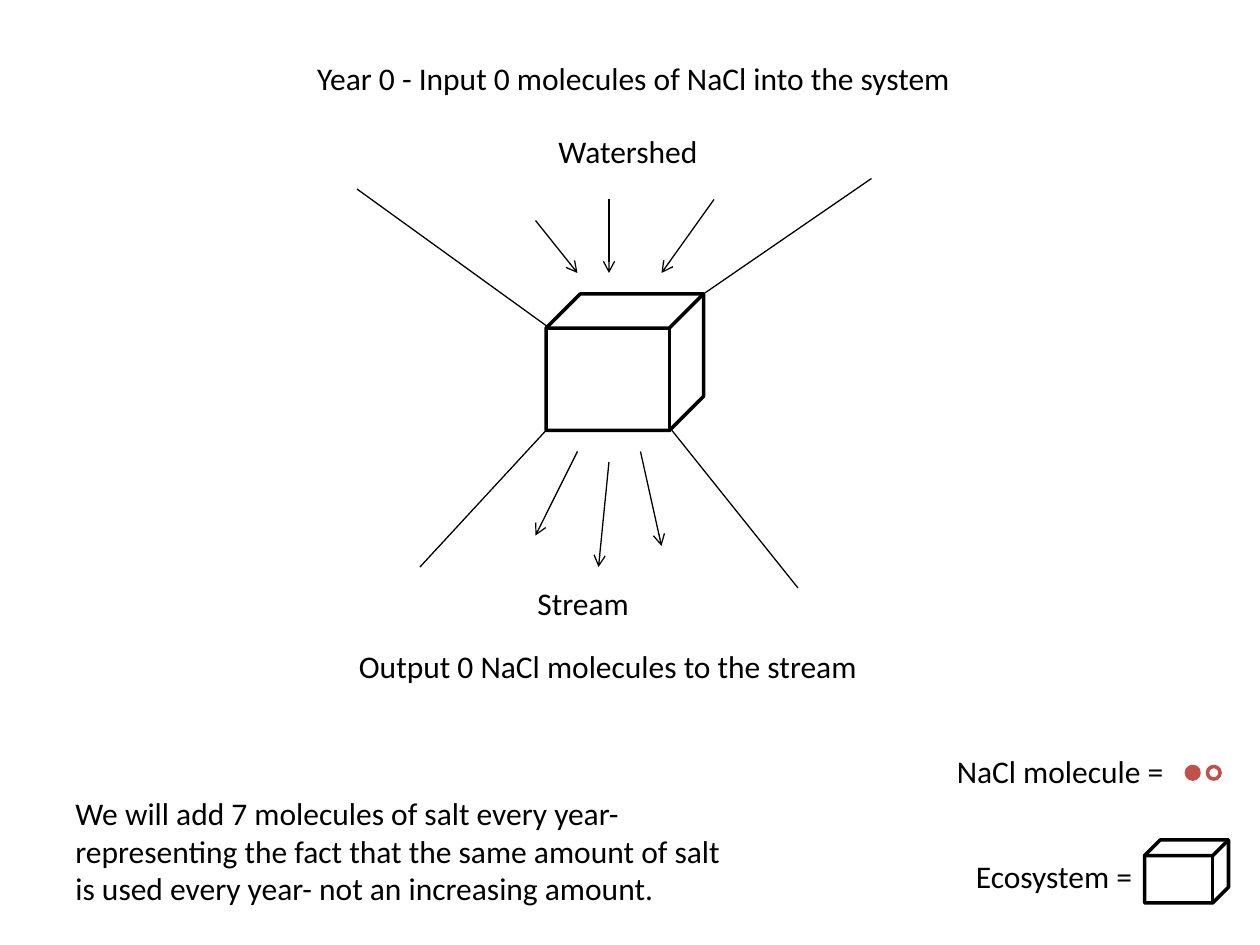
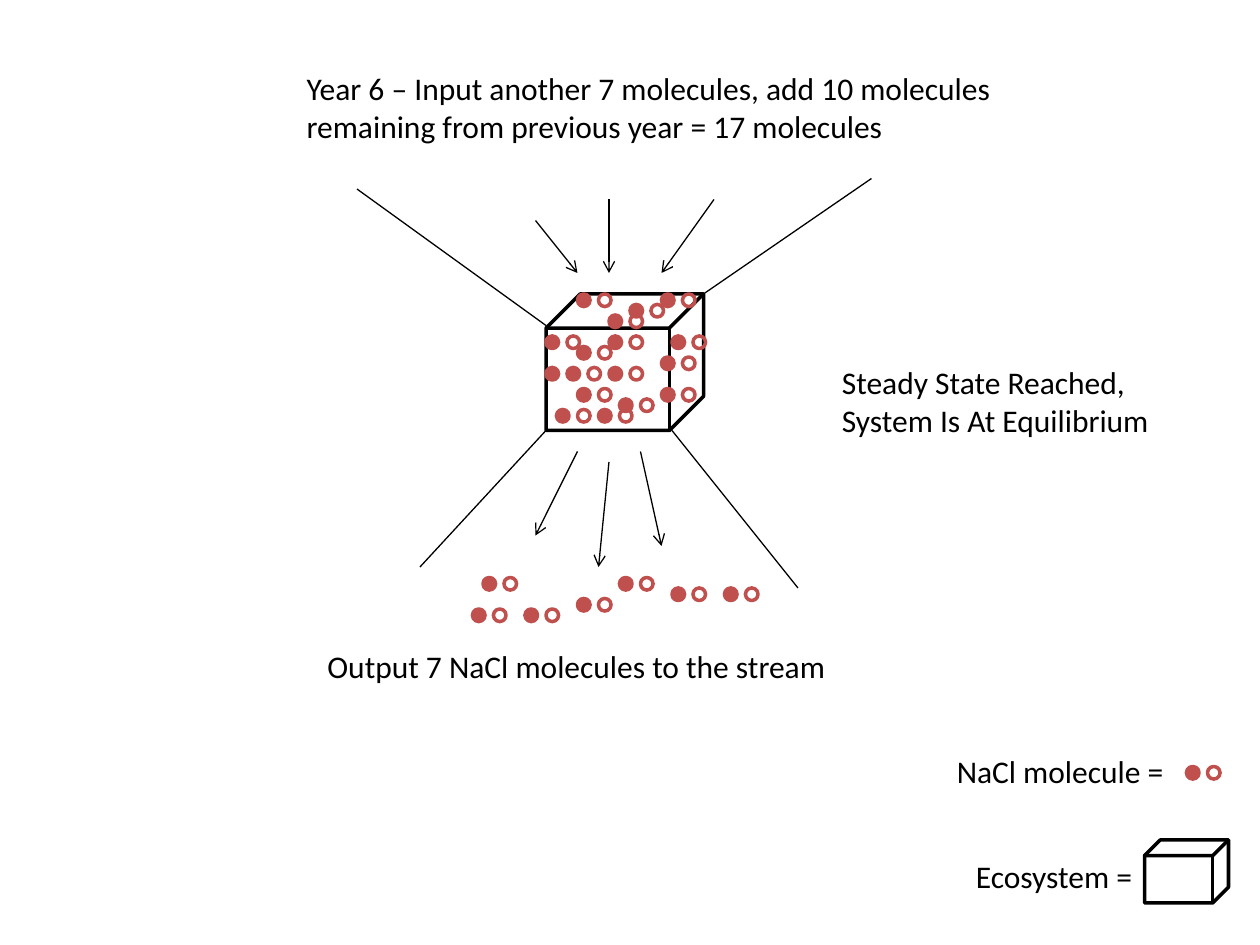
from lxml import etree
from pptx import Presentation
from pptx import util as u
from pptx.dml.color import RGBColor
from pptx.enum import shapes, text
from pptx.oxml.ns import qn

Pt = u.Pt
COLORS = {"ink": "000000", "salt": "C0504D"}
FONT = "Calibri"
ION_SIZE, ION_STEP = 7.2, 12

# Boundary lines of the watershed and the flow arrows: x1, y1, x2, y2
BOUNDARIES = [(312, 246, 240, 324), (384, 246, 456, 336),
              (312, 186, 204, 108), (402, 168, 498, 102)]
FLOWS = [(306, 126, 330, 156), (348, 114, 348, 156), (408, 114, 378, 156),
         (330, 258, 306, 306), (366, 258, 378, 312), (348, 264, 342, 324)]

# Top left corners of the molecules in year 6
STORED = [(312, 192), (348, 192), (354, 228), (330, 168), (384, 192), (378, 168),
          (330, 222), (318, 234), (378, 222), (378, 204), (348, 180), (348, 210),
          (360, 174), (324, 210), (330, 198), (342, 234)]
LONE_ION = (312, 210)
RELEASED = [(276, 330), (330, 342), (384, 336), (354, 330), (300, 348),
            (414, 336), (270, 348)]


def rgb(name):
    return RGBColor.from_string(COLORS[name])


def write(sp, box, words, align=text.PP_ALIGN.LEFT):
    sp.left, sp.top, sp.width, sp.height = map(Pt, box)
    tf = sp.text_frame
    tf.word_wrap = True
    tf.auto_size = text.MSO_AUTO_SIZE.NONE
    tf.vertical_anchor = text.MSO_ANCHOR.TOP
    p = tf.paragraphs[0]
    p.alignment = align
    r = p.add_run()
    r.text = words
    r.font.name, r.font.size = FONT, Pt(18)
    r.font.color.rgb = rgb("ink")


def add_label(parent, box, words, align=text.PP_ALIGN.LEFT):
    write(parent.shapes.add_textbox(*map(Pt, box)), box, words, align)


def add_outline(parent, kind, box, color, filled=False):
    sp = parent.shapes.add_shape(kind, *map(Pt, box))
    sp.shadow.inherit = False
    if filled:
        sp.fill.solid()
        sp.fill.fore_color.rgb = rgb(color)
    else:
        sp.fill.background()
    sp.line.color.rgb = rgb(color)
    sp.line.width = Pt(2)


def add_cube(parent, box):
    add_outline(parent, shapes.MSO_SHAPE.CUBE, box, "ink")


def add_ion(parent, x, y, filled):
    add_outline(parent, shapes.MSO_SHAPE.OVAL, (x, y, ION_SIZE, ION_SIZE), "salt", filled)


def add_molecule(parent, x, y):
    group = parent.shapes.add_group_shape()
    add_ion(group, x, y, True)
    add_ion(group, x + ION_STEP, y, False)


def add_line(slide, ends, arrow=False):
    line = slide.shapes.add_connector(shapes.MSO_CONNECTOR.STRAIGHT, *map(Pt, ends))
    line.line.color.rgb = rgb("ink")
    line.line.width = Pt(0.75)
    if arrow:
        etree.SubElement(line.line._get_or_add_ln(), qn("a:tailEnd"), type="arrow")
    etree.SubElement(line._element.spPr, qn("a:effectLst"))


def add_legend(slide):
    right = text.PP_ALIGN.RIGHT
    add_molecule(slide, 678, 438)
    add_label(slide, (522, 426, 150, 29), "NaCl molecule =", right)
    add_cube(slide, (654, 480, 48, 36))
    add_label(slide, (546, 486, 108, 29), "Ecosystem =", right)


def add_watershed_slide(prs, title, title_box, output, output_box):
    slide = prs.slides.add_slide(prs.slide_layouts[5])
    write(slide.shapes.title, title_box, title)
    add_cube(slide, (312, 168, 90, 78))
    for ends in BOUNDARIES:
        add_line(slide, ends)
    for ends in FLOWS:
        add_line(slide, ends, arrow=True)
    add_label(slide, output_box, output)
    add_legend(slide)
    return slide


def main():
    prs = Presentation()
    prs.slide_width, prs.slide_height = Pt(720), Pt(540)

    # Year 0: empty ecosystem
    slide = add_watershed_slide(
        prs, "Year 0 - Input 0 molecules of NaCl into the system", (174, 30, 390, 29),
        "Output 0 NaCl molecules to the stream", (198, 366, 306, 29))
    add_label(slide, (300, 330, 84, 29), "Stream")
    add_label(slide, (312, 72, 102, 29), "Watershed")
    add_label(slide, (36, 450, 384, 73),
              "We will add 7 molecules of salt every year- representing the fact that "
              "the same amount of salt is used every year- not an increasing amount.")

    # Year 6: steady state
    slide = add_watershed_slide(
        prs, "Year 6 – Input another 7 molecules, add 10 molecules remaining from "
        "previous year = 17 molecules", (168, 36, 432, 51),
        "Output 7 NaCl molecules to the stream", (180, 366, 312, 29))
    add_label(slide, (474, 204, 228, 51), "Steady State Reached, System Is At Equilibrium")
    add_ion(slide, *LONE_ION, True)
    for x, y in STORED + RELEASED:
        add_molecule(slide, x, y)

    prs.save("out.pptx")


if __name__ == "__main__":
    main()
